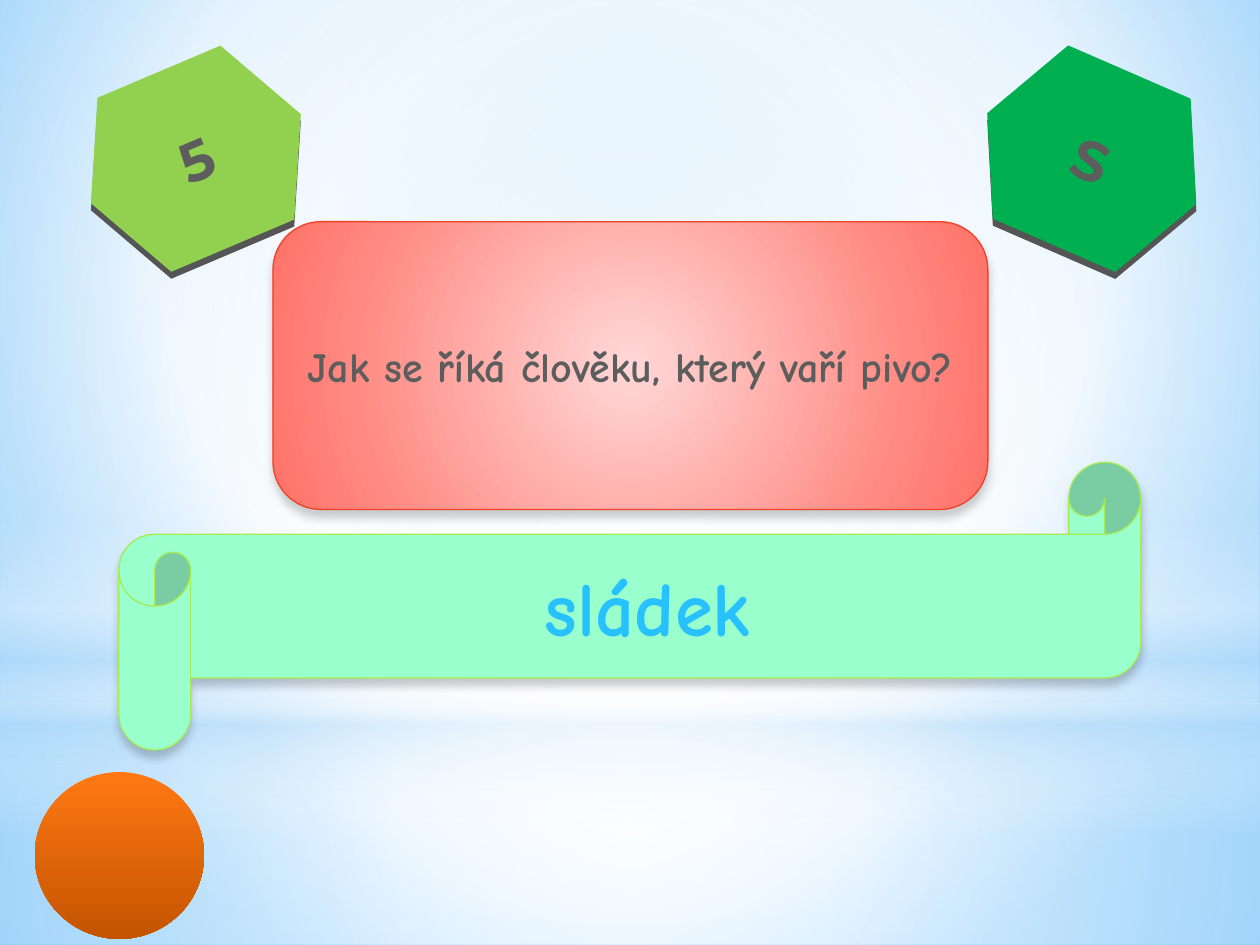
from lxml.etree import SubElement
from pptx import Presentation
from pptx.dml.color import RGBColor
from pptx.enum.shapes import MSO_SHAPE
from pptx.enum.text import MSO_ANCHOR, PP_ALIGN
from pptx.oxml.ns import qn
from pptx.util import Pt


def colour(value):
    """Turn a hex string into a colour."""
    return RGBColor.from_string(value)


class QuizCard:
    """Hold the style and the current slide of a quiz card."""

    grey = "5D5D5D"
    centre = (50, 50, 50, 50)

    def __init__(self, deck):
        """Add a blank page to the deck."""
        self.page = deck.slides.add_slide(deck.slide_layouts[6])

    def add_colour(self, parent, value, opacity=100):
        """Append a colour with its opacity to an element."""
        tint = SubElement(parent, qn("a:srgbClr"), val=value)
        if opacity < 100:
            SubElement(tint, qn("a:alpha"), val=str(opacity * 1000))

    def gradient(self, owner, fill, stops, focus=None):
        """Fill with a gradient, round a focus or from top to bottom."""
        fill.gradient()
        element = next(owner.iter(qn("a:gradFill")))
        for child in list(element):
            element.remove(child)
        stop_list = SubElement(element, qn("a:gsLst"))
        for position, *tint in stops:
            stop = SubElement(stop_list, qn("a:gs"), pos=str(position * 1000))
            self.add_colour(stop, *tint)
        if focus:
            route = SubElement(element, qn("a:path"))
            route.set("path", "circle")
            sides = {side: str(share * 1000) for side, share in zip("ltrb", focus)}
            SubElement(route, qn("a:fillToRect"), **sides)
        else:
            SubElement(element, qn("a:lin"), ang="5400000", scaled="0")

    def background(self, stops, focus):
        """Paint the page background."""
        self.gradient(self.page.element, self.page.background.fill, stops, focus)

    def shape(self, kind, place, fill, focus=None, line=None, rotation=0):
        """Add a preset shape with a plain or gradient fill."""
        shape = self.page.shapes.add_shape(kind, *map(Pt, place))
        shape.rotation = rotation
        shape.shadow.inherit = False
        if isinstance(fill, str):
            shape.fill.solid()
            shape.fill.fore_color.rgb = colour(fill)
        else:
            self.gradient(shape.element, shape.fill, fill, focus)
        if line:
            shape.line.color.rgb = colour(line)
            shape.line.width = Pt(0.75)
        else:
            shape.line.fill.background()
        return shape

    def shadow(self, shape, value="000000", opacity=20, blur=5, distance=4):
        """Drop a shadow straight below a shape."""
        effects = next(shape.element.iter(qn("a:effectLst")))
        drop = SubElement(effects, qn("a:outerShdw"), blurRad=str(Pt(blur)),
                          dist=str(Pt(distance)), dir="5400000", rotWithShape="0")
        self.add_colour(drop, value, opacity)

    def text(self, shape, words, size, face, value=grey):
        """Write one bold centred line in a shape."""
        frame = shape.text_frame
        frame.word_wrap = True
        frame.vertical_anchor = MSO_ANCHOR.MIDDLE
        para = frame.paragraphs[0]
        para.alignment = PP_ALIGN.CENTER
        span = para.add_run()
        span.text = words
        span.font.name = face
        span.font.size = Pt(size)
        span.font.bold = True
        span.font.color.rgb = colour(value)

    def badge(self, words, left, rotation, fill):
        """Add a tilted hexagon with a dark lower edge."""
        hexagon = self.shape(MSO_SHAPE.HEXAGON, (left, 36.7, 130.3, 108), fill,
                             rotation=rotation)
        self.shadow(hexagon, "555555", 100, 0, 4)
        self.text(hexagon, words, 32, "Montserrat")


def main():
    """Build the quiz slide and save it."""
    deck = Presentation()
    deck.slide_width, deck.slide_height = Pt(720), Pt(540)
    card = QuizCard(deck)
    white, mist = "FFFFFF", "B4DCFA"

    card.background([(0, "9ED5FF"), (60, white), (100, "5BB9FF")], (20, 10, 20, 60))
    card.shape(MSO_SHAPE.RECTANGLE, (0, 401.8, 720, 138.2),
               [(0, white, 91), (37, white, 76), (100, mist, 79)], card.centre)
    card.shape(MSO_SHAPE.RECTANGLE, (0, 0, 720, 401.8),
               [(0, white, 89), (48, white, 62), (100, mist, 79)], card.centre)
    card.shape(MSO_SHAPE.RECTANGLE, (0, 296.6, 720, 180),
               [(0, white, 0), (29, white, 30), (45, mist, 40),
                (55, white, 26), (65, mist, 60), (100, white, 0)])
    card.shape(MSO_SHAPE.OVAL, (0, 126, 720, 401.8),
               [(0, white), (56, white, 0)], card.centre)

    card.badge("S", 558.7, 23.5, "00B050")
    card.badge("5", 46.8, 337, "92D050")

    question = card.shape(MSO_SHAPE.ROUNDED_RECTANGLE, (156, 126.7, 408.5, 164.4),
                          [(0, "FFD8D7"), (72, "FF8A83"), (100, "FF7167")],
                          card.centre, "F14124")
    card.shadow(question)
    card.text(question, "Jak se říká člověku, který vaří pivo?", 24, "Comic Neue")

    card.shape(MSO_SHAPE.OVAL, (19.8, 441.2, 96.8, 95.3),
               [(0, "FF7813"), (100, "C45400")])

    answer = card.shape(MSO_SHAPE.HORIZONTAL_SCROLL, (67.9, 264.2, 584, 164.4),
                        "99FFCC", line="A7EA52")
    answer.adjustments[0] = 0.25
    card.shadow(answer)
    card.text(answer, "sládek", 44, "Comic Neue", "28C1FF")

    deck.save("out.pptx")


if __name__ == "__main__":
    main()
